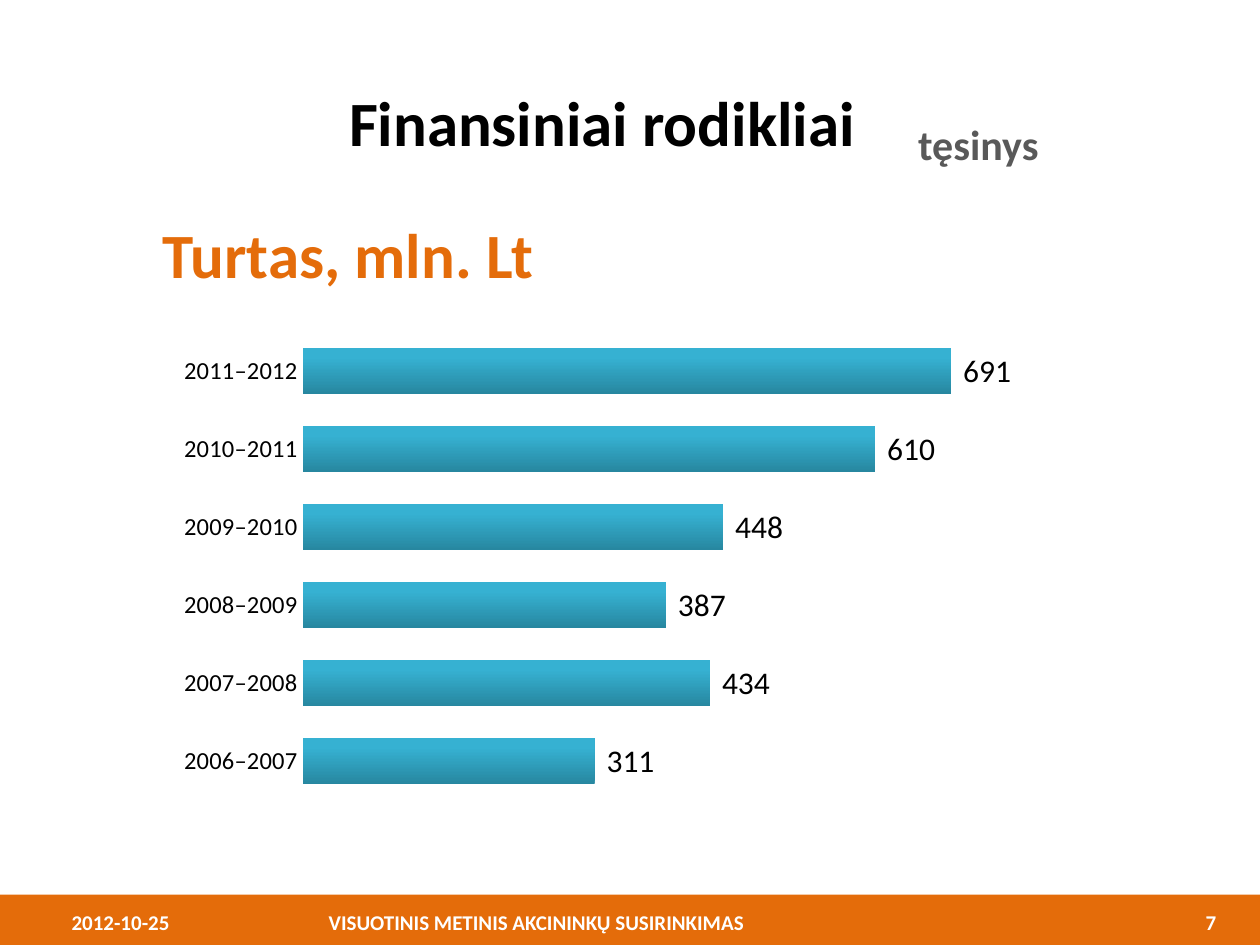
import pptx
import pptx.chart.data
import pptx.dml.color
import pptx.enum.chart
import pptx.enum.shapes
import pptx.enum.text
import pptx.oxml
import pptx.oxml.ns
import pptx.util
from pptx.util import Inches

FONT = "Calibri"
ORANGE, WHITE, BLACK, GRAY = "E46C0A", "FFFFFF", "000000", "595959"
TEAL_DARK, TEAL_LIGHT = "2787A0", "36B1D2"
ASSETS = {
    "2006–2007": 311,
    "2007–2008": 434,
    "2008–2009": 387,
    "2009–2010": 448,
    "2010–2011": 610,
    "2011–2012": 691,
}
ALIGN = pptx.enum.text.PP_ALIGN
ANCHOR = pptx.enum.text.MSO_ANCHOR


def rgb(value):
    return pptx.dml.color.RGBColor.from_string(value)


def set_font(font, size, color, bold=False):
    font.name = FONT
    font.size = pptx.util.Pt(size)
    font.bold = bold
    font.color.rgb = rgb(color)


def set_text(sp, text, size, color, align=ALIGN.CENTER, anchor=ANCHOR.MIDDLE):
    tf = sp.text_frame
    tf.word_wrap = True
    tf.vertical_anchor = anchor
    p = tf.paragraphs[0]
    p.text = text
    p.alignment = align
    for r in p.runs:
        set_font(r.font, size, color, True)
    return p


def set_tabs(p, *stops):
    ns = pptx.oxml.ns.nsdecls("a")
    tabs = "".join(f'<a:tab pos="{Inches(pos)}" algn="{algn}"/>' for pos, algn in stops)
    p._p.get_or_add_pPr().append(pptx.oxml.parse_xml(f"<a:tabLst {ns}>{tabs}</a:tabLst>"))


def set_plot_layout(chart, x, y, w, h):
    ns = pptx.oxml.ns.nsdecls("c")
    values = {"layoutTarget": "inner", "xMode": "edge", "yMode": "edge",
              "x": x, "y": y, "w": w, "h": h}
    items = "".join(f'<c:{name} val="{value}"/>' for name, value in values.items())
    plot_area = chart.element.xpath("c:chart/c:plotArea")[0]
    for layout in plot_area.xpath("c:layout"):
        plot_area.remove(layout)
    plot_area.insert(0, pptx.oxml.parse_xml(
        f"<c:layout {ns}><c:manualLayout>{items}</c:manualLayout></c:layout>"))


def add_header(s, x, y, w, h):
    title = s.shapes.title
    title.left, title.top, title.width, title.height = x, y, w, h
    title.text_frame.margin_left = Inches(2.77)
    set_text(title, "Finansiniai rodikliai", 36, BLACK, ALIGN.LEFT)
    sp = s.shapes.add_textbox(x + Inches(6.87), y + Inches(0.26), Inches(1.79), Inches(0.5))
    set_text(sp, "tęsinys", 24, GRAY, anchor=ANCHOR.TOP)


def add_assets(s, x, y, w, h):
    sp = s.shapes.add_textbox(x, y, Inches(3.79), Inches(0.94))
    set_text(sp, "Turtas, mln. Lt", 36, ORANGE)

    data = pptx.chart.data.CategoryChartData()
    data.categories = list(ASSETS)
    data.add_series("Turtas, mln. Lt", list(ASSETS.values()))
    left, top = Inches(0.34), Inches(0.93)
    chart = s.shapes.add_chart(pptx.enum.chart.XL_CHART_TYPE.BAR_CLUSTERED,
                               x + left, y + top, w - left, h - top, data).chart
    set_font(chart.font, 18, BLACK)
    chart.has_legend = False
    chart.has_title = False
    set_plot_layout(chart, 0.16, 0.04, 0.8, 0.9)

    axis = chart.category_axis
    axis.major_tick_mark = pptx.enum.chart.XL_TICK_MARK.NONE
    axis.format.line.fill.background()
    set_font(axis.tick_labels.font, 14, BLACK)
    axis = chart.value_axis
    axis.visible = False
    axis.has_major_gridlines = False
    axis.minimum_scale, axis.maximum_scale = 0, 800

    plot = chart.plots[0]
    plot.gap_width = 71
    plot.vary_by_categories = False
    plot.has_data_labels = True
    labels = plot.data_labels
    labels.show_value = True
    labels.position = pptx.enum.chart.XL_LABEL_POSITION.OUTSIDE_END
    labels.number_format = r"#\ ##0"
    labels.number_format_is_linked = False
    set_font(labels.font, 18, BLACK)

    fill = plot.series[0].format.fill
    fill.gradient()
    fill.gradient_angle = 90
    for stop, color, position in zip(fill.gradient_stops, (TEAL_DARK, TEAL_LIGHT), (0, 0.8)):
        stop.color.rgb = rgb(color)
        stop.position = position


def add_footer(s, x, y, w, h):
    sp = s.shapes.add_shape(pptx.enum.shapes.MSO_SHAPE.RECTANGLE, x, y, w, h)
    sp.shadow.inherit = False
    sp.fill.solid()
    sp.fill.fore_color.rgb = rgb(ORANGE)
    sp.line.fill.background()
    sp = s.shapes.add_textbox(x + Inches(0.47), y + Inches(0.02), Inches(9.4), Inches(0.4))
    p = set_text(sp, "2012-10-25\tVISUOTINIS METINIS AKCININKŲ SUSIRINKIMAS\t7",
                 12, WHITE, ALIGN.LEFT)
    set_tabs(p, (2.04, "l"), (9, "l"))


def main():
    prs = pptx.Presentation()
    prs.slide_width, prs.slide_height = Inches(10), Inches(7.5)
    s = prs.slides.add_slide(prs.slide_layouts[5])
    add_footer(s, 0, Inches(7.1), prs.slide_width, Inches(0.45))
    add_header(s, 0, Inches(0.63), prs.slide_width, Inches(0.67))
    add_assets(s, Inches(0.87), Inches(1.54), Inches(7.79), Inches(5.06))
    prs.save("out.pptx")


if __name__ == "__main__":
    main()
